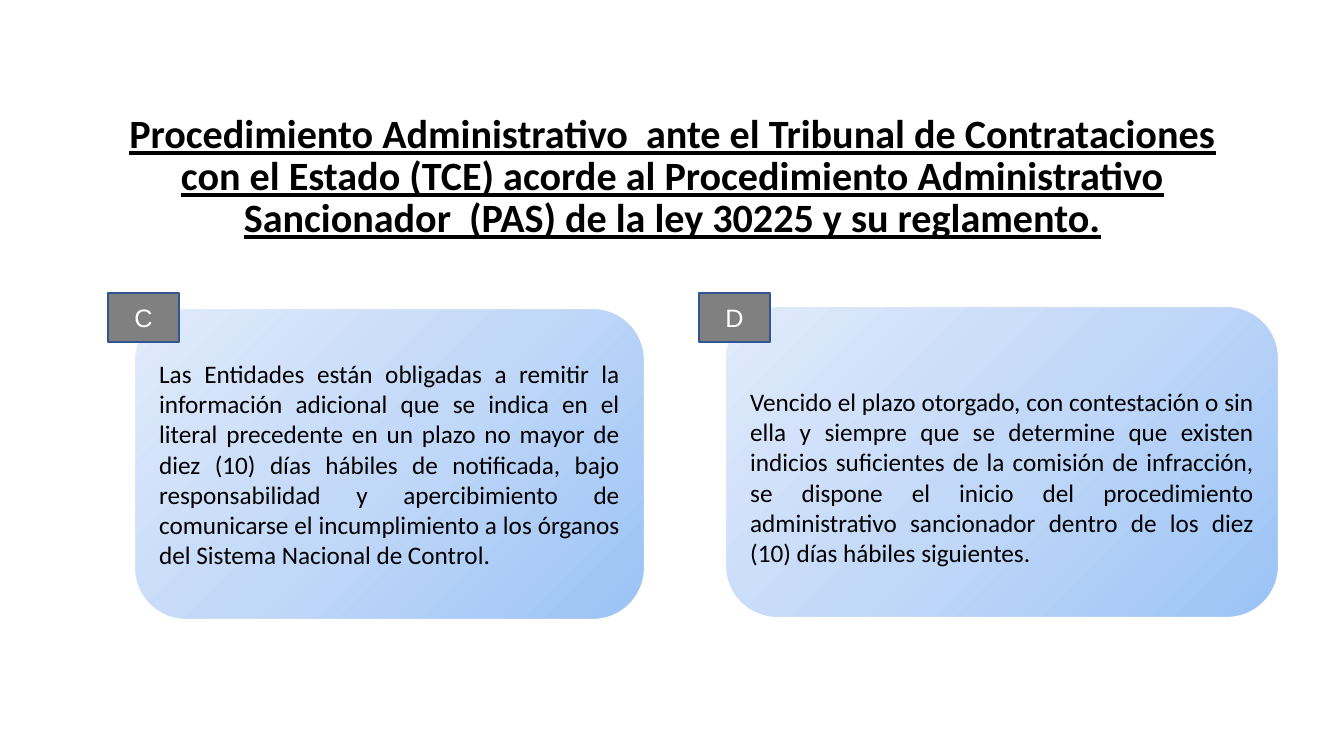
import copy

import pptx
import pptx.dml.color
import pptx.enum.shapes
import pptx.enum.text
import pptx.oxml.ns
import pptx.util

RGBColor = pptx.dml.color.RGBColor
ALIGN = pptx.enum.text.PP_ALIGN
ANCHOR = pptx.enum.text.MSO_ANCHOR
SHAPE = pptx.enum.shapes.MSO_SHAPE

BLACK = RGBColor(0x00, 0x00, 0x00)
WHITE = RGBColor(0xFF, 0xFF, 0xFF)
GRAY = RGBColor(0x80, 0x80, 0x80)
NAVY = RGBColor(0x32, 0x54, 0x91)
CARD_BLUES = (
    RGBColor(0x9A, 0xC3, 0xF5),
    RGBColor(0xC2, 0xD8, 0xF8),
    RGBColor(0xE1, 0xEB, 0xFB),
)

PX_PER_INCH = 100.8
TAG_TOP, TAG_W, TAG_H = 293, 71, 49
CARD_DX, CARD_H = 26, 312

TITLE = (
    "Procedimiento Administrativo  ante el Tribunal de Contrataciones con el Estado (TCE) "
    "acorde al Procedimiento Administrativo Sancionador  (PAS) de la ley 30225 y su reglamento."
)
STEPS = (
    ("C", 108, 308, 511, 5,
     "Las Entidades están obligadas a remitir la información adicional que se indica en el "
     "literal precedente en un plazo no mayor de diez (10) días hábiles de notificada, bajo "
     "responsabilidad y apercibimiento de comunicarse el incumplimiento a los órganos del "
     "Sistema Nacional de Control."),
    ("D", 699, 306, 554, 35,
     "Vencido el plazo otorgado, con contestación o sin ella y siempre que se determine que "
     "existen indicios suficientes de la comisión de infracción, se dispone el inicio del "
     "procedimiento administrativo sancionador dentro de los diez (10) días hábiles siguientes."),
)


def px(n):
    return pptx.util.Emu(round(n * 914400 / PX_PER_INCH))


def write(sp, text, font="Calibri", size=18, color=BLACK, align=ALIGN.JUSTIFY,
          anchor=ANCHOR.MIDDLE, bold=False, underline=False, spacing=1.0, top=5):
    tf = sp.text_frame
    tf.word_wrap = True
    tf.auto_size = pptx.enum.text.MSO_AUTO_SIZE.NONE
    tf.vertical_anchor = anchor
    tf.margin_left = tf.margin_right = px(10)
    tf.margin_top, tf.margin_bottom = px(top), px(5)
    p = tf.paragraphs[0]
    p.alignment = align
    p.line_spacing = spacing
    r = p.add_run()
    r.text = text
    r.font.name = font
    r.font.size = pptx.util.Pt(size)
    r.font.bold = bold
    r.font.underline = underline
    r.font.color.rgb = color


def add_box(s, kind, x, y, w, h, line, width):
    sp = s.shapes.add_shape(kind, px(x), px(y), px(w), px(h))
    sp.shadow.inherit = False
    sp.line.color.rgb = line
    sp.line.width = pptx.util.Pt(width)
    return sp


def fill_gradient(sp, colors, angle):
    sp.fill.gradient()
    sp.fill.gradient_angle = angle
    stop_list = sp._element.spPr.find(".//" + pptx.oxml.ns.qn("a:gsLst"))
    stop_list.append(copy.deepcopy(stop_list[0]))
    for i, (stop, color) in enumerate(zip(sp.fill.gradient_stops, colors)):
        stop.position = i / (len(colors) - 1)
        stop.color.rgb = color


def add_title(s, text):
    sp = s.shapes.title
    sp.left, sp.top, sp.width, sp.height = px(93), px(107), px(1159), px(139)
    write(sp, text, size=28.7, align=ALIGN.CENTER, anchor=ANCHOR.BOTTOM,
          bold=True, underline=True, spacing=0.87)


def add_step(s, letter, x, y, w, top, text):
    card = add_box(s, SHAPE.ROUNDED_RECTANGLE, x + CARD_DX, y, w, CARD_H, WHITE, 1.5)
    fill_gradient(card, CARD_BLUES, 135)
    write(card, text, top=top)
    tag = add_box(s, SHAPE.RECTANGLE, x, TAG_TOP, TAG_W, TAG_H, NAVY, 1)
    tag.fill.solid()
    tag.fill.fore_color.rgb = GRAY
    write(tag, letter, font="Arial", color=WHITE, align=ALIGN.CENTER)


def main():
    prs = pptx.Presentation()
    prs.slide_width, prs.slide_height = px(1344), px(756)
    s = prs.slides.add_slide(prs.slide_layouts[5])
    add_title(s, TITLE)
    for step in STEPS:
        add_step(s, *step)
    prs.save("out.pptx")


if __name__ == "__main__":
    main()
